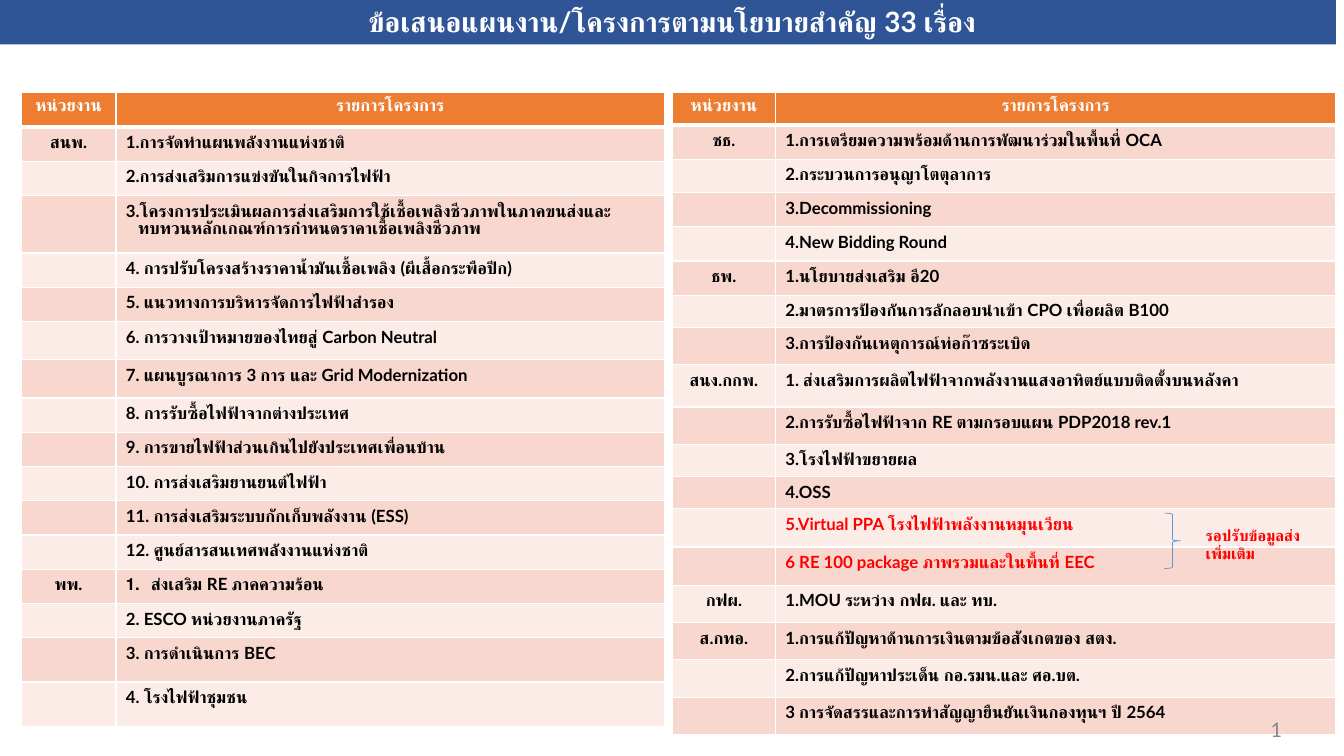
from dataclasses import dataclass
from typing import NamedTuple

from lxml.etree import SubElement
from pptx import Presentation
from pptx.dml.color import RGBColor
from pptx.enum.shapes import MSO_SHAPE as SHAPE
from pptx.enum.text import MSO_ANCHOR as ANCHOR, MSO_AUTO_SIZE as AUTO_SIZE, PP_ALIGN as ALIGN
from pptx.oxml.ns import qn
from pptx.util import Inches, Pt


@dataclass(frozen=True)
class Theme:
    font: str = "Lato"
    number_font: str = "Calibri"
    white: str = "FFFFFF"
    black: str = "000000"
    red: str = "FF0000"
    gray: str = "898989"
    title_fill: str = "2F5597"
    header_fill: str = "ED7D31"
    bands: tuple = ("F8D7CE", "FCECE8")
    brace: str = "5B9BD5"
    title_size: int = 20
    cell_size: int = 12
    note_size: int = 11
    number_size: int = 16


THEME = Theme()


class Project(NamedTuple):
    text: str
    height: float = 0.34
    color: str = THEME.black
    hang: float = 0
    numbered: bool = False


HEADINGS = ("หน่วยงาน", "รายการโครงการ")
LEFT_AGENCIES = [
    ("สนพ.", [
        Project("1.การจัดทำแผนพลังงานแห่งชาติ"),
        Project("2.การส่งเสริมการแข่งขันในกิจการไฟฟ้า"),
        Project("3.โครงการประเมินผลการส่งเสริมการใช้เชื้อเพลิงชีวภาพในภาคขนส่งและ"
                "ทบทวนหลักเกณฑ์การกำหนดราคาเชื้อเพลิงชีวภาพ", 0.57, hang=0.12),
        Project("4. การปรับโครงสร้างราคาน้ำมันเชื้อเพลิง (ผีเสื้อกระพือปีก)"),
        Project("5. แนวทางการบริหารจัดการไฟฟ้าสำรอง"),
        Project("6. การวางเป้าหมายของไทยสู่ Carbon Neutral", 0.38),
        Project("7. แผนบูรณาการ 3 การ และ Grid Modernization", 0.38),
        Project("8. การรับซื้อไฟฟ้าจากต่างประเทศ"),
        Project("9. การขายไฟฟ้าส่วนเกินไปยังประเทศเพื่อนบ้าน"),
        Project("10. การส่งเสริมยานยนต์ไฟฟ้า"),
        Project("11. การส่งเสริมระบบกักเก็บพลังงาน (ESS)"),
        Project("12. ศูนย์สารสนเทศพลังงานแห่งชาติ"),
    ]),
    ("พพ.", [
        Project("ส่งเสริม RE ภาคความร้อน", hang=0.25, numbered=True),
        Project("2. ESCO หน่วยงานภาครัฐ", hang=0.19),
        Project("3. การดำเนินการ BEC", 0.44),
        Project("4. โรงไฟฟ้าชุมชน", 0.44),
    ]),
]
RIGHT_AGENCIES = [
    ("ชธ.", [
        Project("1.การเตรียมความพร้อมด้านการพัฒนาร่วมในพื้นที่ OCA"),
        Project("2.กระบวนการอนุญาโตตุลาการ", 0.33),
        Project("3.Decommissioning"),
        Project("4.New Bidding Round"),
    ]),
    ("ธพ.", [
        Project("1.นโยบายส่งเสริม อี20"),
        Project("2.มาตรการป้องกันการลักลอบนำเข้า CPO เพื่อผลิต B100", 0.32),
        Project("3.การป้องกันเหตุการณ์ท่อก๊าซระเบิด", 0.37),
    ]),
    ("สนง.กกพ.", [
        Project("1. ส่งเสริมการผลิตไฟฟ้าจากพลังงานแสงอาทิตย์แบบติดตั้งบนหลังคา", 0.42),
        Project("2.การรับซื้อไฟฟ้าจาก RE ตามกรอบแผน PDP2018 rev.1", 0.37),
        Project("3.โรงไฟฟ้าขยายผล", 0.32),
        Project("4.OSS", 0.32),
        Project("5.Virtual PPA โรงไฟฟ้าพลังงานหมุนเวียน", 0.38, THEME.red),
        Project("6 RE 100 package ภาพรวมและในพื้นที่ EEC", 0.38, THEME.red),
    ]),
    ("กฟผ.", [Project("1.MOU ระหว่าง กฟผ. และ ทบ.", 0.37)]),
    ("ส.กทอ.", [
        Project("1.การแก้ปัญหาด้านการเงินตามข้อสังเกตของ สตง.", 0.37),
        Project("2.การแก้ปัญหาประเด็น กอ.รมน.และ ศอ.บต.", 0.37),
        Project("3 การจัดสรรและการทำสัญญายืนยันเงินกองทุนฯ ปี 2564", 0.37),
    ]),
]


def rgb(color):
    return RGBColor.from_string(color)


def write(tf, text, size, color, align=ALIGN.LEFT, bold=True, font=THEME.font):
    p = tf.paragraphs[0]
    p.alignment = align
    r = p.add_run()
    r.text = text
    r.font.size, r.font.bold, r.font.name = Pt(size), bold, font
    r.font.color.rgb = rgb(color)
    return p


def hang_indent(p, hang, numbered):
    pPr = p._p.get_or_add_pPr()
    pPr.set("marL", str(Inches(hang)))
    pPr.set("indent", str(-Inches(hang)))
    if numbered:
        SubElement(pPr, qn("a:buFont"), typeface="+mj-lt")
        SubElement(pPr, qn("a:buAutoNum"), type="arabicPeriod")


def shrink_empty(cell):
    """Keep an empty cell from stretching its row."""
    cell.margin_top = cell.margin_bottom = 0
    SubElement(cell.text_frame.paragraphs[0]._p, qn("a:endParaRPr"),
               sz=str(THEME.cell_size * 100))


def style_cell(cell, fill, top=1, bottom=1):
    """Draw white borders (widths in points), then the fill."""
    tcPr = cell._tc.get_or_add_tcPr()
    for side, width in (("L", 1), ("R", 1), ("T", top), ("B", bottom)):
        ln = SubElement(tcPr, qn(f"a:ln{side}"), w=str(Pt(width)))
        SubElement(SubElement(ln, qn("a:solidFill")), qn("a:srgbClr"), val=THEME.white)
    cell.fill.solid()
    cell.fill.fore_color.rgb = rgb(fill)


def add_project_table(s, left, widths, header_height, agencies):
    rows = [(agency if i == 0 else "", project)
            for agency, projects in agencies for i, project in enumerate(projects)]
    heights = [header_height] + [project.height for _, project in rows]
    table = s.shapes.add_table(len(heights), 2, Inches(left), Inches(0.92),
                               Inches(sum(widths)), Inches(sum(heights))).table
    for column, width in zip(table.columns, widths):
        column.width = Inches(width)
    for row, height in zip(table.rows, heights):
        row.height = Inches(height)
    for cell, heading in zip(table.rows[0].cells, HEADINGS):
        style_cell(cell, THEME.header_fill, bottom=3)
        write(cell.text_frame, heading, THEME.cell_size, THEME.white, ALIGN.CENTER)
    for i, (agency, project) in enumerate(rows):
        agency_cell, project_cell = table.rows[i + 1].cells
        for cell in (agency_cell, project_cell):
            style_cell(cell, THEME.bands[i % 2], top=3 if i == 0 else 1)
        if agency:
            write(agency_cell.text_frame, agency, THEME.cell_size, THEME.black, ALIGN.CENTER)
        else:
            shrink_empty(agency_cell)
        p = write(project_cell.text_frame, project.text, THEME.cell_size, project.color)
        if project.hang:
            hang_indent(p, project.hang, project.numbered)


def add_title_bar(s, text):
    sp = s.shapes.add_shape(SHAPE.RECTANGLE, Inches(-0.08), 0, Inches(13.33), Inches(0.44))
    sp.shadow.inherit = False
    sp.fill.solid()
    sp.fill.fore_color.rgb = rgb(THEME.title_fill)
    sp.line.fill.background()
    tf = sp.text_frame
    tf.word_wrap, tf.auto_size = True, AUTO_SIZE.SHAPE_TO_FIT_TEXT
    tf.vertical_anchor = ANCHOR.TOP
    tf.margin_left = Inches(0.26)
    write(tf, text, THEME.title_size, THEME.white, ALIGN.CENTER)


def add_brace(s, left, top, width, height):
    sp = s.shapes.add_shape(SHAPE.RIGHT_BRACE, Inches(left), Inches(top),
                            Inches(width), Inches(height))
    sp.shadow.inherit = False
    sp.fill.background()
    sp.line.color.rgb = rgb(THEME.brace)
    sp.line.width = Pt(0.5)


def add_text_frame(s, left, top, width, height):
    tf = s.shapes.add_textbox(Inches(left), Inches(top), Inches(width), Inches(height)).text_frame
    tf.word_wrap = True
    return tf


def main():
    prs = Presentation()
    prs.slide_width, prs.slide_height = Inches(13.33), Inches(7.5)
    s = prs.slides.add_slide(prs.slide_layouts[6])
    add_project_table(s, 0.21, (0.94, 5.44), 0.34, LEFT_AGENCIES)
    add_title_bar(s, "ข้อเสนอแผนงาน/โครงการตามนโยบายสำคัญ 33 เรื่อง")
    add_project_table(s, 6.67, (1.02, 5.56), 0.32, RIGHT_AGENCIES)
    number = add_text_frame(s, 9.81, 7.03, 3, 0.4)
    number.vertical_anchor = ANCHOR.MIDDLE
    write(number, "1", THEME.number_size, THEME.gray, ALIGN.RIGHT, False, THEME.number_font)
    add_brace(s, 11.55, 5.09, 0.16, 0.55)
    note = add_text_frame(s, 11.86, 5.17, 1.26, 0.47)
    note.auto_size = AUTO_SIZE.SHAPE_TO_FIT_TEXT
    write(note, "รอปรับข้อมูลส่งเพิ่มเติม", THEME.note_size, THEME.red)
    prs.save("out.pptx")


if __name__ == "__main__":
    main()
